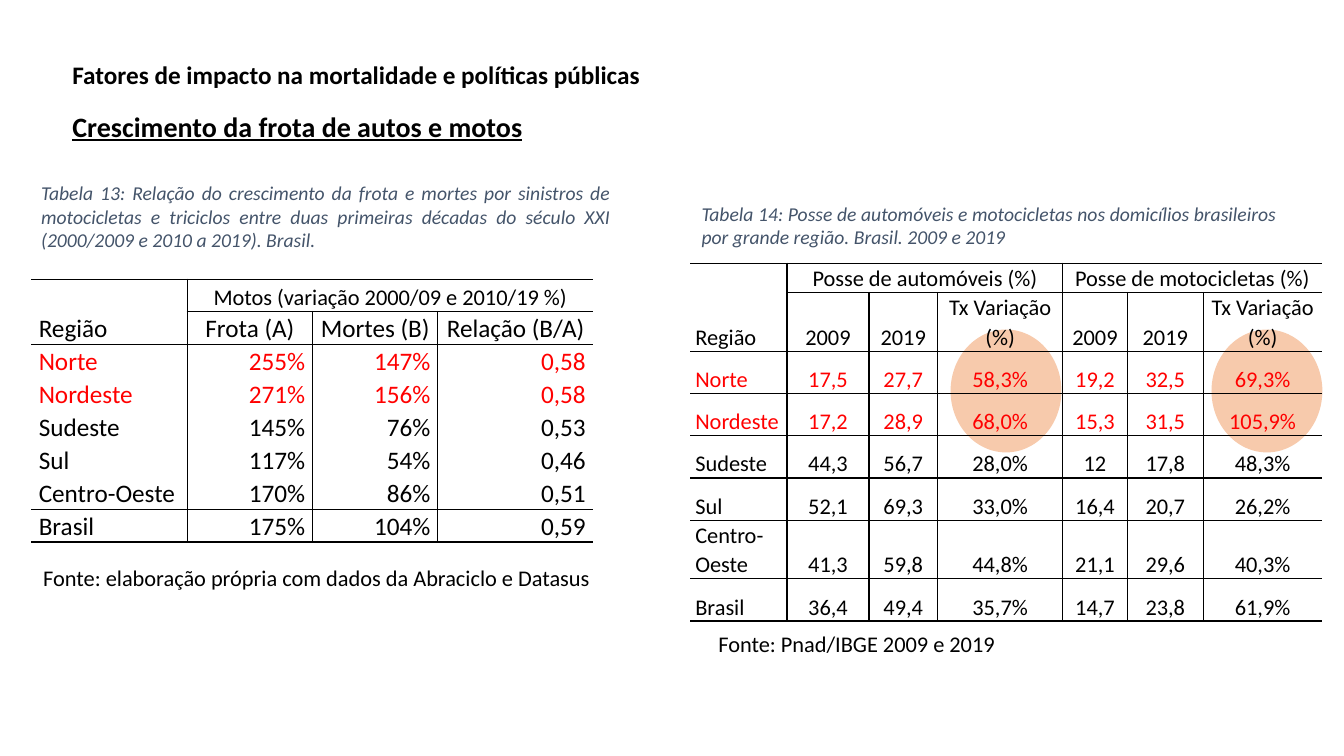
import lxml.etree
import pptx
import pptx.dml.color
import pptx.enum.shapes
import pptx.enum.text
import pptx.oxml.ns
import pptx.util

Pt = pptx.util.Pt
ALIGN = pptx.enum.text.PP_ALIGN
ANCHOR = pptx.enum.text.MSO_ANCHOR

THEME = {
    "font": "Calibri",
    "text": "000000", "highlight": "FF0000", "caption": "44546A", "circle": "F7CAAC",
    "title_size": 18, "subtitle_size": 20, "caption_size": 14, "source_size": 16,
    "line_spacing": 1.07, "border": 1,
}
TITLE = "Fatores de impacto na mortalidade e políticas públicas"
SUBTITLE = "Crescimento da frota de autos e motos"
TITLE_BOX = (44.5, 37.5, 425, 68.5)
HIGHLIGHTED_REGIONS = ("Norte", "Nordeste")

# group_starts: columns where a header group begins; ruled_rows: rows with a line above them
FLEET = {
    "position": (22.3, 199.5), "columns": (111.5, 89.5, 89.5, 111), "row_heights": [23] * 8,
    "margin": 5.4, "group_size": 16, "size": 18, "number_align": ALIGN.RIGHT,
    "group_starts": (1,), "merges": [(0, 1, 0, 3)], "ruled_rows": (0, 1, 2, 7, 8),
    "rows": [
        ("", "Motos (variação 2000/09 e 2010/19 %)", "", ""),
        ("Região", "Frota (A)", "Mortes (B)", "Relação (B/A)"),
        ("Norte", "255%", "147%", "0,58"),
        ("Nordeste", "271%", "156%", "0,58"),
        ("Sudeste", "145%", "76%", "0,53"),
        ("Sul", "117%", "54%", "0,46"),
        ("Centro-Oeste", "170%", "86%", "0,51"),
        ("Brasil", "175%", "104%", "0,59"),
    ],
}
OWNERSHIP = {
    "position": (493.2, 188), "columns": (69, 58.5, 49, 89.5, 46, 54.5, 84.5),
    "row_heights": [16] + [30.2] * 7,
    "margin": 3.5, "group_size": 16, "size": 16, "number_align": ALIGN.CENTER,
    "group_starts": (1, 4), "merges": [(0, 0, 1, 0), (0, 1, 0, 3), (0, 4, 0, 6)],
    "ruled_rows": range(9),
    "rows": [
        ("Região", "Posse de automóveis (%)", "", "", "Posse de motocicletas (%)", "", ""),
        ("", "2009", "2019", "Tx Variação (%)", "2009", "2019", "Tx Variação (%)"),
        ("Norte", "17,5", "27,7", "58,3%", "19,2", "32,5", "69,3%"),
        ("Nordeste", "17,2", "28,9", "68,0%", "15,3", "31,5", "105,9%"),
        ("Sudeste", "44,3", "56,7", "28,0%", "12", "17,8", "48,3%"),
        ("Sul", "52,1", "69,3", "33,0%", "16,4", "20,7", "26,2%"),
        ("Centro-Oeste", "41,3", "59,8", "44,8%", "21,1", "29,6", "40,3%"),
        ("Brasil", "36,4", "49,4", "35,7%", "14,7", "23,8", "61,9%"),
    ],
}
CAPTIONS = [
    ("Tabela 13: Relação do crescimento da frota e mortes por sinistros de motocicletas e "
     "triciclos entre duas primeiras décadas do século XXI (2000/2009 e 2010 a 2019). Brasil.",
     (22.3, 125.3, 421, 58.3)),
    ("Tabela 14: Posse de automóveis e motocicletas nos domicílios brasileiros por grande "
     "região. Brasil. 2009 e 2019",
     (494, 140.4, 425, 41)),
]
SOURCES = [
    ("Fonte: elaboração própria com dados da Abraciclo e Datasus", (23.8, 399.6, 410, 26.6)),
    ("Fonte: Pnad/IBGE 2009 e 2019", (506, 446.4, 214.6, 26.6)),
]
CIRCLES = [(679, 235.4, 79.2, 87.8), (865.4, 235.4, 79.2, 87.8)]


def color(name):
    return pptx.dml.color.RGBColor.from_string(THEME[name])


def write(paragraph, text, size, color_name="text", align=ALIGN.JUSTIFY, spacing=1.0,
          bold=False, italic=False, underline=False):
    paragraph.alignment = align
    paragraph.line_spacing = spacing
    run = paragraph.add_run()
    run.text = text
    font = run.font
    font.name, font.size = THEME["font"], Pt(size)
    font.bold, font.italic, font.underline = bold, italic, underline
    font.color.rgb = color(color_name)


def add_title(slide):
    title = slide.shapes.title
    title.left, title.top, title.width, title.height = map(Pt, TITLE_BOX)
    frame = title.text_frame
    frame.word_wrap = True
    frame.auto_size = pptx.enum.text.MSO_AUTO_SIZE.NONE
    frame.vertical_anchor = ANCHOR.TOP
    spacing = THEME["line_spacing"]
    write(frame.paragraphs[0], TITLE, THEME["title_size"], spacing=spacing, bold=True)
    subtitle = frame.add_paragraph()
    subtitle.space_before = Pt(12)
    write(subtitle, SUBTITLE, THEME["subtitle_size"], spacing=spacing, bold=True, underline=True)


def add_text(slide, text, box, anchor, size, **style):
    frame = slide.shapes.add_textbox(*map(Pt, box)).text_frame
    frame.word_wrap = True
    frame.vertical_anchor = anchor
    write(frame.paragraphs[0], text, size, **style)


def add_circle(slide, box):
    circle = slide.shapes.add_shape(pptx.enum.shapes.MSO_SHAPE.OVAL, *map(Pt, box))
    circle.shadow.inherit = False
    circle.fill.solid()
    circle.fill.fore_color.rgb = color("circle")
    circle.line.fill.background()


def set_border(cell, side, visible):
    qualified = pptx.oxml.ns.qn
    properties = cell._tc.get_or_add_tcPr()
    line = lxml.etree.SubElement(properties, qualified("a:ln" + side))
    if visible:
        line.set("w", str(Pt(THEME["border"])))
        fill = lxml.etree.SubElement(line, qualified("a:solidFill"))
        lxml.etree.SubElement(fill, qualified("a:srgbClr"), val=THEME["text"])
    else:
        lxml.etree.SubElement(line, qualified("a:noFill"))


def draw_borders(cell, data, row, column):
    def vertical(edge):
        inside = 0 < edge < len(data["columns"])
        return inside and (row > 0 or edge in data["group_starts"])

    def horizontal(edge):
        return edge in data["ruled_rows"] and (edge, column) != (1, 0)

    set_border(cell, "L", vertical(column))
    set_border(cell, "R", vertical(column + 1))
    set_border(cell, "T", horizontal(row))
    set_border(cell, "B", horizontal(row + 1))


def add_data_table(slide, data):
    rows, widths, heights = data["rows"], data["columns"], data["row_heights"]
    table = slide.shapes.add_table(
        len(rows), len(widths), *map(Pt, data["position"]), Pt(sum(widths)), Pt(sum(heights))).table
    table.first_row = table.horz_banding = False
    for column, width in zip(table.columns, widths):
        column.width = Pt(width)
    for row, height in zip(table.rows, heights):
        row.height = Pt(height)
    for top, left, bottom, right in data["merges"]:
        table.cell(top, left).merge(table.cell(bottom, right))
    for r, values in enumerate(rows):
        for c, text in enumerate(values):
            cell = table.cell(r, c)
            cell.margin_left = cell.margin_right = Pt(data["margin"])
            cell.margin_top = cell.margin_bottom = 0
            cell.vertical_anchor = ANCHOR.BOTTOM
            draw_borders(cell, data, r, c)
            cell.fill.background()
            if text:
                align = ALIGN.JUSTIFY if c == 0 else ALIGN.CENTER if r < 2 else data["number_align"]
                write(cell.text_frame.paragraphs[0], text,
                      data["group_size"] if r == 0 else data["size"],
                      "highlight" if values[0] in HIGHLIGHTED_REGIONS else "text",
                      align, THEME["line_spacing"])


def main():
    presentation = pptx.Presentation()
    presentation.slide_width, presentation.slide_height = Pt(960), Pt(540)
    slide = presentation.slides.add_slide(presentation.slide_layouts.get_by_name("Title Only"))
    add_title(slide)
    for box in CIRCLES:
        add_circle(slide, box)
    for data in (FLEET, OWNERSHIP):
        add_data_table(slide, data)
    for text, box in CAPTIONS:
        add_text(slide, text, box, ANCHOR.MIDDLE, THEME["caption_size"],
                 color_name="caption", italic=True)
    for text, box in SOURCES:
        add_text(slide, text, box, ANCHOR.TOP, THEME["source_size"])
    presentation.save("out.pptx")


if __name__ == "__main__":
    main()
